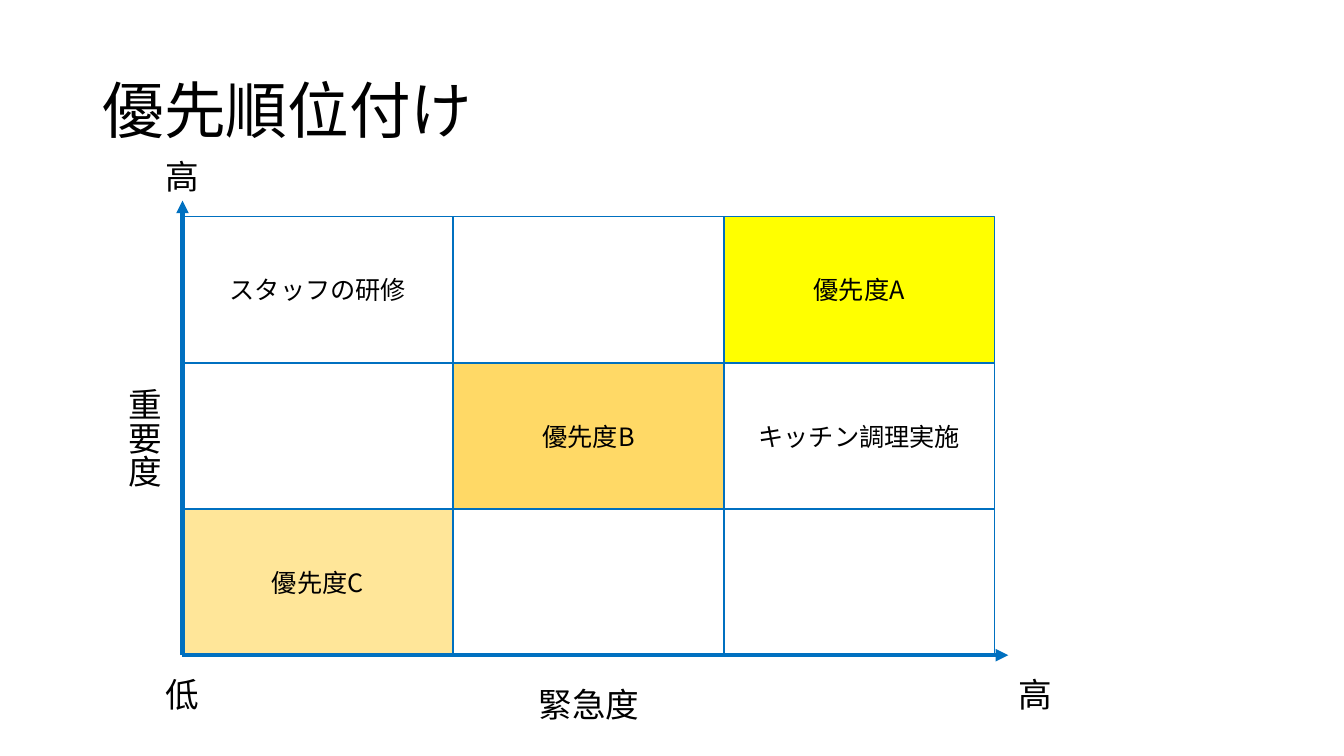
from dataclasses import dataclass

from lxml import etree
from pptx import Presentation
from pptx.dml.color import RGBColor
from pptx.enum.shapes import MSO_CONNECTOR, MSO_SHAPE
from pptx.enum.text import MSO_ANCHOR, MSO_AUTO_SIZE, PP_ALIGN
from pptx.oxml.ns import qn
from pptx.util import Inches, Pt

RECT = MSO_SHAPE.RECTANGLE
LINE = MSO_CONNECTOR.STRAIGHT
LEFT, CENTER = PP_ALIGN.LEFT, PP_ALIGN.CENTER
TOP, MIDDLE = MSO_ANCHOR.TOP, MSO_ANCHOR.MIDDLE
GROW, FIXED = MSO_AUTO_SIZE.SHAPE_TO_FIT_TEXT, MSO_AUTO_SIZE.NONE


@dataclass(frozen=True)
class Theme:
    font: str = "Noto Sans CJK JP"
    ink: str = "000000"
    blue: str = "0070C0"
    white: str = "FFFFFF"
    high: str = "FFFF00"
    mid: str = "FFD966"
    low: str = "FFE699"
    title: int = 44
    label: int = 24
    cell: int = 18
    thin: int = 1
    thick: int = 3


THEME = Theme()
GRID_X, GRID_Y = 1.81, 2.15
CELL_W, CELL_H = 2.685, 1.45
BASE_Y = GRID_Y + 3 * CELL_H
CELLS = [
    [("スタッフの研修", THEME.white), ("", THEME.white), ("優先度A", THEME.high)],
    [("", THEME.white), ("優先度B", THEME.mid), ("キッチン調理実施", THEME.white)],
    [("優先度C", THEME.low), ("", THEME.white), ("", THEME.white)],
]
LABELS = [
    ("緊急度", 4.65, 6.74),
    ("低", 0.62, 6.64),
    ("高", 9.08, 6.64),
    ("高", 0.62, 1.5),
]


def color(code):
    return RGBColor.from_string(code)


def write(shape, text, size=THEME.label, align=CENTER, anchor=TOP,
          fit=FIXED, space=None, upright=False):
    frame = shape.text_frame
    frame.word_wrap = True
    frame.auto_size = fit
    frame.vertical_anchor = anchor
    para = frame.paragraphs[0]
    para.alignment = align
    if space:
        para.line_spacing = space
    run = para.add_run()
    run.text = text
    run.font.size = Pt(size)
    run.font.name = THEME.font
    run.font.color.rgb = color(THEME.ink)
    for props in shape.element.iter(qn("a:rPr")):
        etree.SubElement(props, qn("a:ea"), typeface=THEME.font)
    if upright:
        for body in shape.element.iter(qn("a:bodyPr")):
            body.set("vert", "eaVert")


def add_text(slide, text, x, y, w, h, **style):
    box = slide.shapes.add_textbox(Inches(x), Inches(y), Inches(w), Inches(h))
    write(box, text, **style)


def add_cell(slide, text, fill, x, y):
    cell = slide.shapes.add_shape(
        RECT, Inches(x), Inches(y), Inches(CELL_W), Inches(CELL_H))
    cell.shadow.inherit = False
    cell.fill.solid()
    cell.fill.fore_color.rgb = color(fill)
    cell.line.color.rgb = color(THEME.blue)
    cell.line.width = Pt(THEME.thin)
    if text:
        write(cell, text, size=THEME.cell, anchor=MIDDLE)


def add_axis(slide, x, y):
    axis = slide.shapes.add_connector(
        LINE, Inches(GRID_X), Inches(BASE_Y), Inches(x), Inches(y))
    axis.line.color.rgb = color(THEME.blue)
    axis.line.width = Pt(THEME.thick)
    props = axis.element.find(qn("p:spPr"))
    etree.SubElement(props.find(qn("a:ln")), qn("a:tailEnd"), type="triangle")
    etree.SubElement(props, qn("a:effectLst"))


def main():
    deck = Presentation()
    deck.slide_width = Inches(13.33)
    deck.slide_height = Inches(7.5)
    slide = deck.slides.add_slide(deck.slide_layouts[6])

    add_text(slide, "優先順位付け", 0.92, 0.4, 11.5, 1.45,
             size=THEME.title, align=LEFT, anchor=MIDDLE, space=0.9)
    for col in range(3):
        for row in range(3):
            text, fill = CELLS[row][col]
            add_cell(slide, text, fill,
                     GRID_X + col * CELL_W, GRID_Y + row * CELL_H)
    add_axis(slide, GRID_X, 1.99)
    add_axis(slide, 10, BASE_Y)
    add_text(slide, "重要度", 1.07, 3.75, 0.61, 2.72,
             align=LEFT, fit=GROW, upright=True)
    for text, x, y in LABELS:
        add_text(slide, text, x, y, 2.38, 0.5, fit=GROW)
    deck.save("out.pptx")


if __name__ == "__main__":
    main()
